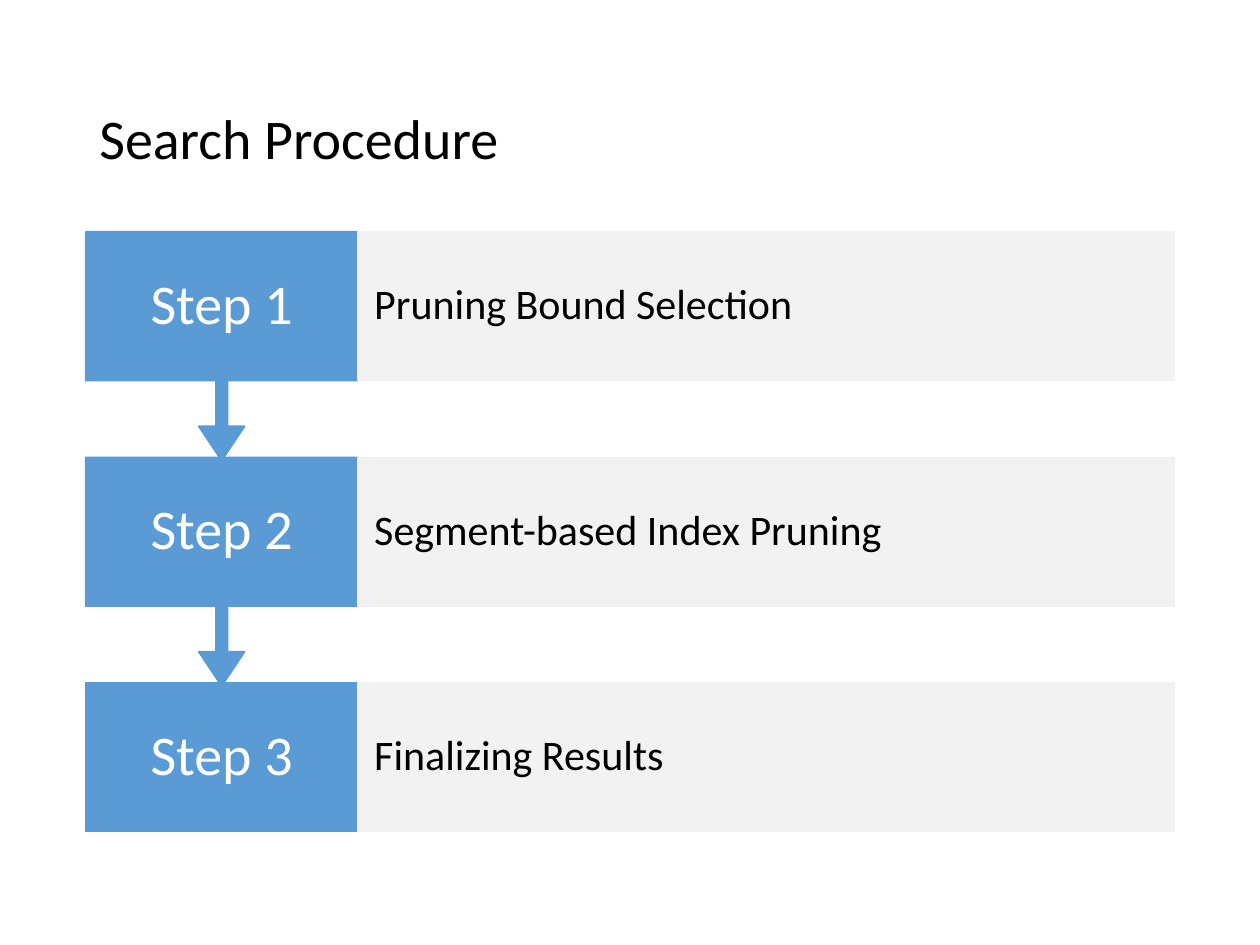
from dataclasses import dataclass

from pptx import Presentation
from pptx.dml.color import RGBColor
from pptx.enum.shapes import MSO_SHAPE
from pptx.enum.text import MSO_ANCHOR, PP_ALIGN
from pptx.shapes.autoshape import Shape
from pptx.util import Inches, Pt

RECT, CALLOUT = MSO_SHAPE.RECTANGLE, MSO_SHAPE.DOWN_ARROW_CALLOUT
MIDDLE = MSO_ANCHOR.MIDDLE
LEFT, CENTER = PP_ALIGN.LEFT, PP_ALIGN.CENTER

SLIDE_W, SLIDE_H = 10, 7.5
FONT = "Calibri"
BLUE, GRAY, BLACK, WHITE = "5B9BD5", "F2F2F2", "000000", "FFFFFF"

# Step grid: a narrow label column, a column three times as wide, equal rows
GRID_X, GRID_Y = 0.68, 1.84
LABEL_W = 2.16
DETAIL_W = 3 * LABEL_W
ROW_H, ROW_PITCH = 1.18, 1.79
BOX_SHARE = 0.65  # part of a callout's height above its arrow
ARROW_SHARES = (0.05, 0.1, 0.15)  # shaft width, head half-width, head length


@dataclass(frozen=True)
class Step:
    label: str
    detail: str


@dataclass(frozen=True)
class Style:
    size: int
    color: str
    align: PP_ALIGN
    inset: float


TITLE = Style(32, BLACK, LEFT, 0.1)
LABEL = Style(32, WHITE, CENTER, 0.15)
DETAIL = Style(24, BLACK, LEFT, 0.13)

STEPS = [
    Step("Step 1", "Pruning Bound Selection"),
    Step("Step 2", "Segment-based Index Pruning"),
    Step("Step 3", "Finalizing Results"),
]


def rgb(color: str) -> RGBColor:
    return RGBColor.from_string(color)


def write(s: Shape, text: str, style: Style) -> None:
    tf = s.text_frame
    tf.word_wrap = True
    tf.vertical_anchor = MIDDLE
    tf.margin_left = tf.margin_right = Inches(style.inset)
    p = tf.paragraphs[0]
    p.alignment = style.align
    p.line_spacing = 0.9
    r = p.add_run()
    r.text = text
    r.font.name = FONT
    r.font.size = Pt(style.size)
    r.font.color.rgb = rgb(style.color)


def add_block(shapes, kind: MSO_SHAPE, x: float, y: float, w: float, h: float,
              color: str) -> Shape:
    s = shapes.add_shape(kind, Inches(x), Inches(y), Inches(w), Inches(h))
    s.shadow.inherit = False
    s.fill.solid()
    s.fill.fore_color.rgb = rgb(color)
    s.line.color.rgb = rgb(color)
    s.line.width = Pt(1)
    return s


def add_step(shapes, row: int, step: Step, is_last: bool) -> None:
    """Draw one row; every label but the last points down to the next row."""
    y = GRID_Y + row * ROW_PITCH
    if is_last:
        label = add_block(shapes, RECT, GRID_X, y, LABEL_W, ROW_H, BLUE)
    else:
        label = add_block(shapes, CALLOUT, GRID_X, y, LABEL_W,
                          ROW_H / BOX_SHARE, BLUE)
        for i, share in enumerate((*ARROW_SHARES, BOX_SHARE)):
            label.adjustments[i] = share
    write(label, step.label, LABEL)
    detail = add_block(shapes, RECT, GRID_X + LABEL_W, y, DETAIL_W, ROW_H, GRAY)
    write(detail, step.detail, DETAIL)


def main() -> None:
    prs = Presentation()
    prs.slide_width, prs.slide_height = Inches(SLIDE_W), Inches(SLIDE_H)
    shapes = prs.slides.add_slide(prs.slide_layouts[6]).shapes

    title = shapes.add_textbox(Inches(0.69), Inches(0.4), Inches(8.62), Inches(1.45))
    write(title, "Search Procedure", TITLE)

    last = len(STEPS) - 1
    for row in range(last, -1, -1):  # upper arrows lie over the lower boxes
        add_step(shapes, row, STEPS[row], row == last)

    prs.save("out.pptx")


if __name__ == "__main__":
    main()
